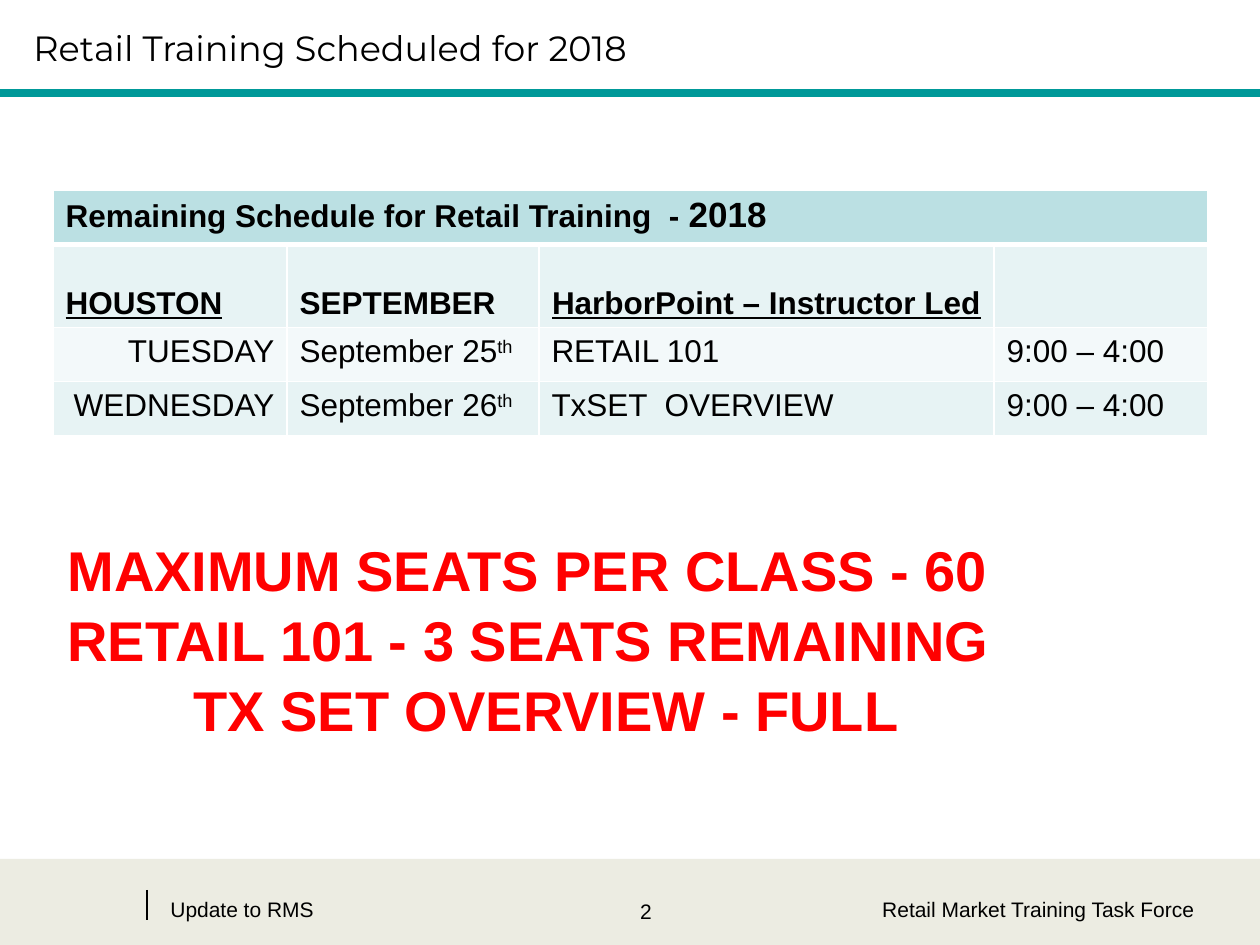
from dataclasses import dataclass
from typing import Optional

from lxml import etree
from pptx import Presentation
from pptx import util as u
from pptx.dml.color import RGBColor
from pptx.enum import shapes, text
from pptx.oxml import ns

PX = 914400 // 126
HUE = {
    "ink": "000000", "teal": "009999", "sand": "ECECE2", "red": "FF0000",
    "head": "BBE0E3", "band": "E7F3F4", "pale": "F3F9FA", "edge": "FFFFFF",
}
LEFT, MID, RIGHT = text.PP_ALIGN.LEFT, text.PP_ALIGN.CENTER, text.PP_ALIGN.RIGHT
TOP, LOW = text.MSO_ANCHOR.TOP, text.MSO_ANCHOR.BOTTOM


@dataclass
class Label:
    words: str
    x: int
    y: int
    w: int
    h: int
    size: int = 12
    font: str = "Arial"
    hue: str = "ink"
    bold: bool = False
    align: int = LEFT
    anchor: int = TOP
    pitch: Optional[float] = None


@dataclass
class Rule:
    x: int
    y: int
    w: int
    h: int
    hue: str
    wide: float


@dataclass
class Bit:
    words: str
    size: int = 18
    bold: bool = False
    under: bool = False
    sup: bool = False


@dataclass
class Cell:
    bits: list[Bit]
    align: int = LEFT


@dataclass
class Row:
    cells: list[Cell]
    high: int
    fill: str
    anchor: int = TOP
    base: float = 1


def color(hue: str) -> RGBColor:
    return RGBColor.from_string(HUE[hue])


def style(run, size: int, font: str, hue: str, bold: bool) -> None:
    run.font.size = u.Pt(size)
    run.font.name = font
    run.font.bold = bold
    run.font.color.rgb = color(hue)


def add_label(slide, item: Label):
    box = slide.shapes.add_textbox(*(n * PX for n in (item.x, item.y, item.w, item.h)))
    frame = box.text_frame
    frame.word_wrap = True
    frame.vertical_anchor = item.anchor
    frame.text = item.words
    for para in frame.paragraphs:
        para.alignment = item.align
        if item.pitch:
            para.line_spacing = item.pitch
        for run in para.runs:
            style(run, item.size, item.font, item.hue, item.bold)
    return box


def add_rule(slide, rule: Rule) -> None:
    line = slide.shapes.add_connector(
        shapes.MSO_CONNECTOR.STRAIGHT, rule.x * PX, rule.y * PX,
        (rule.x + rule.w) * PX, (rule.y + rule.h) * PX)
    line.line.color.rgb = color(rule.hue)
    line.line.width = u.Pt(rule.wide)
    etree.SubElement(line._element.spPr, ns.qn("a:effectLst"))


def add_edges(cell, base: float) -> None:
    props = cell._tc.get_or_add_tcPr()
    for spot, (side, wide) in enumerate((("L", 1), ("R", 1), ("T", 1), ("B", base))):
        edge = etree.Element(ns.qn(f"a:ln{side}"), w=str(u.Pt(wide)))
        fill = etree.SubElement(edge, ns.qn("a:solidFill"))
        etree.SubElement(fill, ns.qn("a:srgbClr"), val=HUE["edge"])
        props.insert(spot, edge)


def fill_cell(cell, item: Cell, row: Row) -> None:
    cell.fill.solid()
    cell.fill.fore_color.rgb = color(row.fill)
    cell.vertical_anchor = row.anchor
    add_edges(cell, row.base)
    para = cell.text_frame.paragraphs[0]
    para.alignment = item.align
    for bit in item.bits:
        run = para.add_run()
        run.text = bit.words
        style(run, bit.size, "Arial", "ink", bit.bold)
        run.font.underline = bit.under
        if bit.sup:
            run._r.get_or_add_rPr().set("baseline", "30000")


def add_grid(slide, x: int, y: int, cols: list[int], rows: list[Row]) -> None:
    high = sum(row.high for row in rows)
    grid = slide.shapes.add_table(
        len(rows), len(cols), x * PX, y * PX, sum(cols) * PX, high * PX).table
    grid.horz_banding = False
    grid.first_row = False
    for col, wide in zip(grid.columns, cols):
        col.width = wide * PX
    grid.cell(0, 0).merge(grid.cell(0, len(cols) - 1))
    for r, row in enumerate(rows):
        grid.rows[r].height = row.high * PX
        for c, item in enumerate(row.cells):
            fill_cell(grid.cell(r, c), item, row)


def class_row(day: str, date: str, topic: str, fill: str) -> Row:
    return Row([
        Cell([Bit(day)], RIGHT),
        Cell([Bit(date), Bit("th", sup=True)]),
        Cell([Bit(topic)]),
        Cell([Bit("9:00 – 4:00")]),
    ], 54, fill)


ROWS = [
    Row([Cell([Bit("Remaining Schedule for Retail Training  - ", bold=True),
               Bit("2018", 20, True)])] + [Cell([]) for _ in range(3)],
        53, "head", base=3),
    Row([Cell([Bit("HOUSTON", bold=True, under=True)]),
         Cell([Bit("SEPTEMBER", bold=True)]),
         Cell([Bit("HarborPoint – Instructor Led", bold=True, under=True)], MID),
         Cell([])], 83, "band", LOW),
    class_row("TUESDAY", "September 25", "RETAIL 101", "pale"),
    class_row("WEDNESDAY", "September 26", "TxSET  OVERVIEW", "band"),
]
RULES = [Rule(147, 890, 0, 30, "ink", 0.75), Rule(0, 93, 1260, 0, "teal", 4.5)]
LABELS = [
    Label("2", 473, 892, 346, 63, align=MID),
    Label("Retail Training Scheduled for 2018", 21, 0, 1197, 95, 20, "Montserrat",
          anchor=text.MSO_ANCHOR.MIDDLE),
    Label("Retail Market Training Task Force", 861, 890, 346, 63, align=RIGHT),
    Label("Update to RMS", 158, 890, 294, 66),
]
SEATS = Label(
    "MAXIMUM SEATS PER CLASS - 60\nRETAIL 101 - 3 SEATS REMAINING\nTX SET OVERVIEW - FULL",
    55, 527, 1163, 217, 32, hue="red", bold=True, pitch=1.04)


def main() -> None:
    deck = Presentation()
    deck.slide_width, deck.slide_height = 1260 * PX, 945 * PX
    slide = deck.slides.add_slide(deck.slide_layouts[6])
    foot = slide.shapes.add_shape(
        shapes.MSO_SHAPE.RECTANGLE, 0, 859 * PX, 1260 * PX, 86 * PX)
    foot.shadow.inherit = False
    foot.fill.solid()
    foot.fill.fore_color.rgb = color("sand")
    foot.line.fill.background()
    for rule in RULES:
        add_rule(slide, rule)
    for item in LABELS:
        add_label(slide, item)
    add_grid(slide, 53, 190, [234, 252, 455, 214], ROWS)
    seats = add_label(slide, SEATS)
    last = seats.text_frame.paragraphs[-1]
    last._p.get_or_add_pPr().set("marL", str(126 * PX))
    deck.save("out.pptx")


if __name__ == "__main__":
    main()
